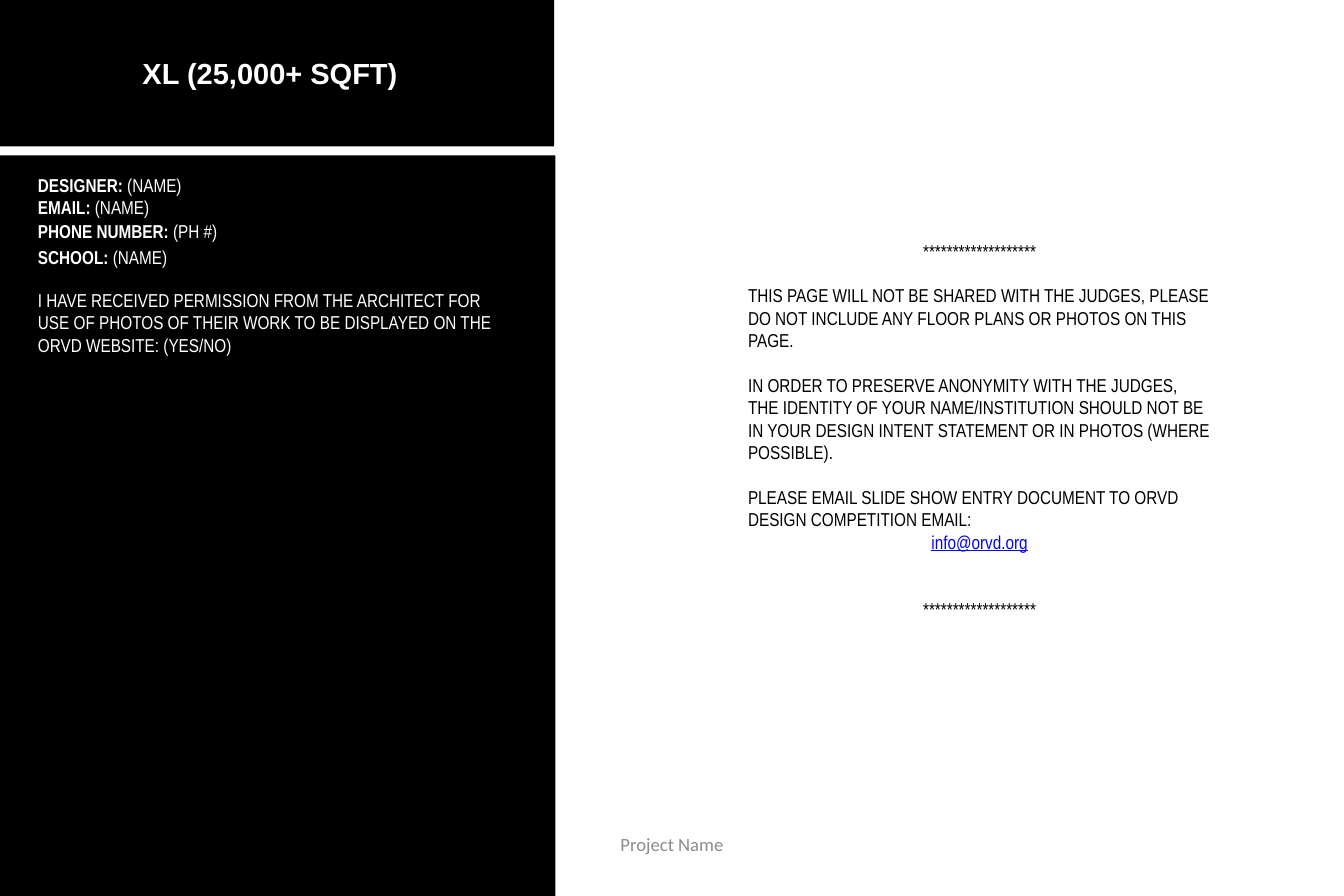
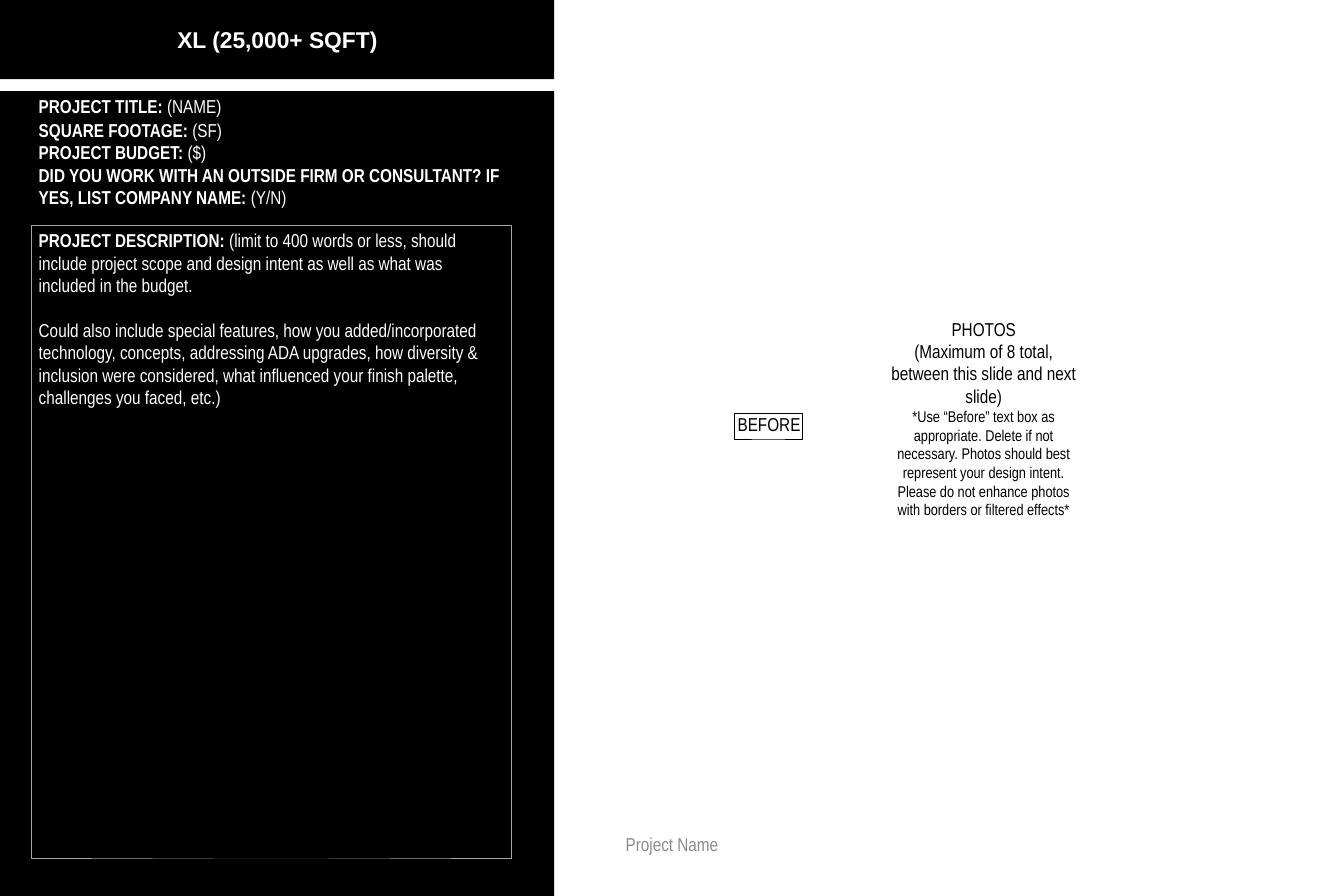
from dataclasses import dataclass
from pptx import Presentation
from pptx.dml.color import RGBColor
from pptx.enum.shapes import MSO_SHAPE
from pptx.enum.text import MSO_ANCHOR, PP_ALIGN
from pptx.util import Inches, Pt

RECTANGLE = MSO_SHAPE.RECTANGLE
TOP = MSO_ANCHOR.TOP
LEFT, CENTER = PP_ALIGN.LEFT, PP_ALIGN.CENTER


@dataclass(frozen=True)
class Theme:
    black: RGBColor = RGBColor(0, 0, 0)
    white: RGBColor = RGBColor(255, 255, 255)
    link: RGBColor = RGBColor(0, 0, 255)
    footer: RGBColor = RGBColor(0x8C, 0x8C, 0x8C)
    frame: RGBColor = RGBColor(0xA6, 0xA6, 0xA6)
    body_font: str = "Arial Narrow"
    title_font: str = "Arial"
    footer_font: str = "Calibri"
    body: int = 18
    note: int = 15
    cover_title: int = 28
    entry_title: int = 22
    gap: float = 21.5


THEME = Theme()
DARK = {"name": THEME.body_font, "size": THEME.body, "color": THEME.white}
LIGHT = {**DARK, "color": THEME.black}
NO_INSETS = (0, 0, 0, 0)
INSETS = (0.1, 0.05, 0.1, 0.05)

TITLE = "XL (25,000+ SQFT)"
FOOTER = "Project Name"
STARS = "*******************"
COLUMN_WIDTH = 6.42

CONTACTS = [
    (2.28, "DESIGNER: ", "(NAME)"),
    (2.58, "EMAIL: ", "(NAME)"),
    (2.89, "PHONE NUMBER: ", "(PH #)"),
    (3.25, "SCHOOL: ", "(NAME)"),
]
PERMISSION = (
    "I HAVE RECEIVED PERMISSION FROM THE ARCHITECT FOR USE OF PHOTOS OF THEIR WORK "
    "TO BE DISPLAYED ON THE ORVD WEBSITE: (YES/NO)"
)
INSTRUCTIONS = [
    {"text": STARS, "align": CENTER},
    {"text": "THIS PAGE WILL NOT BE SHARED WITH THE JUDGES, PLEASE DO NOT INCLUDE ANY "
             "FLOOR PLANS OR PHOTOS ON THIS PAGE.", "gaps": 1},
    {"text": "IN ORDER TO PRESERVE ANONYMITY WITH THE JUDGES, THE IDENTITY OF YOUR "
             "NAME/INSTITUTION SHOULD NOT BE IN YOUR DESIGN INTENT STATEMENT OR IN "
             "PHOTOS (WHERE POSSIBLE).", "gaps": 1},
    {"text": "PLEASE EMAIL SLIDE SHOW ENTRY DOCUMENT TO ORVD DESIGN COMPETITION EMAIL:",
     "gaps": 1},
    {"text": "info@orvd.org", "align": CENTER,
     "style": {"color": THEME.link, "underline": True}},
    {"text": STARS, "align": CENTER, "gaps": 2},
]
PROJECT_TITLE = [{"label": "PROJECT TITLE: ", "text": "(NAME)"}]
PROJECT_FACTS = [
    {"label": "SQUARE FOOTAGE: ", "text": "(SF)"},
    {"label": "PROJECT BUDGET: ", "text": "($)"},
    {"label": "DID YOU WORK WITH AN OUTSIDE FIRM OR CONSULTANT? IF YES, LIST COMPANY NAME: ",
     "text": "(Y/N)"},
]
DESCRIPTION = [
    {"label": "PROJECT DESCRIPTION: ",
     "text": "(limit to 400 words or less, should include project scope and design "
             "intent as well as what was included in the budget."},
    {"text": "Could also include special features, how you added/incorporated technology, "
             "concepts, addressing ADA upgrades, how diversity & inclusion were considered, "
             "what influenced your finish palette, challenges you faced, etc.)", "gaps": 1},
]
BEFORE = [{"text": "BEFORE", "align": CENTER}]
PHOTOS = [
    {"text": "PHOTOS", "align": CENTER},
    {"text": "(Maximum of 8 total, between this slide and next slide)", "align": CENTER},
    {"text": "*Use “Before” text box as appropriate. Delete if not necessary. Photos "
             "should best represent your design intent. Please do not enhance photos "
             "with borders or filtered effects*", "align": CENTER,
     "style": {"size": THEME.note}},
]


def add_span(para, text, style):
    span = para.add_run()
    span.text = text
    for key, value in style.items():
        if key == "color":
            span.font.color.rgb = value
        else:
            setattr(span.font, key, Pt(value) if key == "size" else value)


def write(box, paragraphs, style, insets=INSETS):
    frame = box.text_frame
    left, top, right, bottom = map(Inches, insets)
    settings = {"word_wrap": True, "vertical_anchor": TOP, "margin_left": left,
                "margin_top": top, "margin_right": right, "margin_bottom": bottom}
    for key, value in settings.items():
        setattr(frame, key, value)
    for index, item in enumerate(paragraphs):
        para = frame.add_paragraph() if index else frame.paragraphs[0]
        para.alignment = item.get("align", LEFT)
        para.space_before = Pt(THEME.gap * item.get("gaps", 0))
        if "label" in item:
            add_span(para, item["label"], {**style, "bold": True})
        add_span(para, item["text"], {**style, **item.get("style", {})})


def add_text(page, place, paragraphs, style, insets=INSETS):
    box = page.shapes.add_textbox(*map(Inches, place))
    write(box, paragraphs, style, insets)


def add_rectangle(page, place, fill=None, line=None, weight=0.75):
    box = page.shapes.add_shape(RECTANGLE, *map(Inches, place))
    box.shadow.inherit = False
    if fill is None:
        box.fill.background()
    else:
        box.fill.solid()
        box.fill.fore_color.rgb = fill
    if line is None:
        box.line.fill.background()
    else:
        box.line.color.rgb = line
        box.line.width = Pt(weight)
    return box


def add_page(deck, panels, title_place, title_size, footer_font):
    page = deck.slides.add_slide(deck.slide_layouts[6])
    for place in panels:
        add_rectangle(page, place, THEME.black)
    add_text(page, title_place, [{"text": TITLE, "align": CENTER}],
             {"name": THEME.title_font, "size": title_size,
              "color": THEME.white, "bold": True})
    add_text(page, (6.12, 11.16, 5.76, 0.6), [{"text": FOOTER, "align": CENTER}],
             {"name": footer_font, "size": THEME.body, "color": THEME.footer}, NO_INSETS)
    return page


def build_cover(deck):
    page = add_page(deck, [(0, 0, 7.42, 1.96), (0, 2.08, 7.44, 9.92)],
                    (0.19, 0.69, 6.85, 0.57), THEME.cover_title, THEME.footer_font)
    for top, label, text in CONTACTS:
        add_text(page, (0.41, top, COLUMN_WIDTH, 0.4),
                 [{"label": label, "text": text}], DARK)
    add_text(page, (0.41, 3.82, COLUMN_WIDTH, 1.01), [{"text": PERMISSION}], DARK)
    add_text(page, (9.92, 3.16, 6.4, 5.55), INSTRUCTIONS, LIGHT)


def build_entry(deck):
    page = add_page(deck, [(0, 0, 7.42, 1.06), (0, 1.22, 7.42, 10.78)],
                    (0.29, 0.3, 6.85, 0.47), THEME.entry_title, THEME.body_font)
    add_text(page, (0.42, 1.22, COLUMN_WIDTH, 0.71), PROJECT_TITLE, DARK)
    add_text(page, (0.42, 1.54, COLUMN_WIDTH, 1.31), PROJECT_FACTS, DARK)
    description = add_rectangle(page, (0.42, 3.02, COLUMN_WIDTH, 8.47),
                                line=THEME.frame, weight=0.25)
    write(description, DESCRIPTION, DARK)
    before = add_rectangle(page, (9.83, 5.53, 0.92, 0.35), line=THEME.black)
    write(before, BEFORE, LIGHT, (0.02, 0, 0, 0))
    add_text(page, (11.83, 4.25, 2.67, 2.92), PHOTOS, LIGHT, (0.02, 0, 0, 0))


def main():
    deck = Presentation()
    deck.slide_width, deck.slide_height = Inches(18), Inches(12)
    build_cover(deck)
    build_entry(deck)
    deck.save("out.pptx")


if __name__ == "__main__":
    main()
